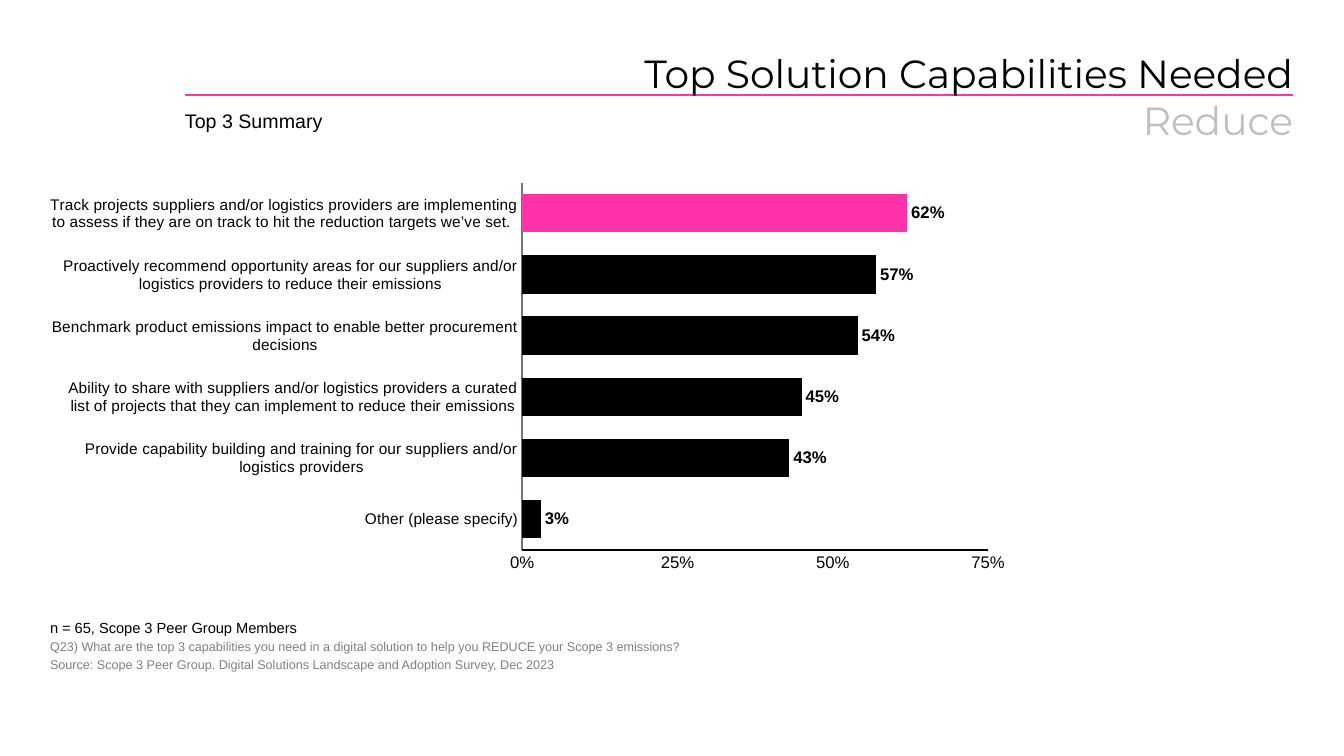
"""Builds the slide on top solution capabilities needed to reduce emissions."""
import pptx
import pptx.chart.data
import pptx.dml.color
import pptx.enum.chart
import pptx.enum.shapes
import pptx.enum.text
import pptx.oxml
import pptx.oxml.ns
import pptx.util

PX = 914400 / 100.8
PINK, BLACK, GREY = "FF32A9", "000000", "808080"


def px(*lengths):
    return [pptx.util.Emu(round(length * PX)) for length in lengths]


def style(font, size, color=BLACK, name="Arial", bold=False):
    font.size = pptx.util.Pt(size)
    font.name = name
    font.bold = bold
    font.color.rgb = pptx.dml.color.RGBColor.from_string(color)


deck = pptx.Presentation()
deck.slide_width, deck.slide_height = px(1344, 756)
page = deck.slides.add_slide(deck.slide_layouts[5])

title = page.shapes.title
title.left, title.top, title.width, title.height = px(185, 49, 1108, 49)
frame = title.text_frame
frame.margin_left = frame.margin_right = frame.margin_top = frame.margin_bottom = 0
frame.vertical_anchor = pptx.enum.text.MSO_ANCHOR.TOP
frame.auto_size = pptx.enum.text.MSO_AUTO_SIZE.NONE
frame.word_wrap = True
para = frame.paragraphs[0]
para.alignment = pptx.enum.text.PP_ALIGN.RIGHT
span = para.add_run()
span.text = "Top Solution Capabilities Needed"
style(span.font, 28, name="Montserrat")
para.add_line_break()
span = para.add_run()
span.text = "Reduce"
style(span.font, 28, "BFBFBF", name="Montserrat")

rule = page.shapes.add_connector(
    pptx.enum.shapes.MSO_CONNECTOR.STRAIGHT, *px(185, 95, 1293, 95))
rule.line.color.rgb = pptx.dml.color.RGBColor.from_string(PINK)
rule.line.width = pptx.util.Pt(2)
rule.element.spPr.append(pptx.oxml.parse_xml(
    f"<a:effectLst {pptx.oxml.ns.nsdecls('a')}/>"))
title.element.addprevious(rule.element)

capabilities = [
    ("Other (please specify)", 0.03),
    ("Provide capability building and training for our suppliers and/or "
     "logistics providers", 0.43),
    ("Ability to share with suppliers and/or logistics providers a curated "
     "list of projects that they can implement to reduce their emissions", 0.45),
    ("Benchmark product emissions impact to enable better procurement decisions", 0.54),
    ("Proactively recommend opportunity areas for our suppliers and/or "
     "logistics providers to reduce their emissions", 0.57),
    ("Track projects suppliers and/or logistics providers are implementing "
     "to assess if they are on track to hit the reduction targets we’ve set. ", 0.62),
]
data = pptx.chart.data.CategoryChartData(number_format="0%")
data.categories = [name for name, share in capabilities]
data.add_series("Series 1", [share for name, share in capabilities])
chart = page.shapes.add_chart(
    pptx.enum.chart.XL_CHART_TYPE.BAR_CLUSTERED, *px(50, 181, 968, 425), data).chart
chart.has_legend = False
chart.has_title = False
style(chart.font, 10)

for axis, size, color in [(chart.category_axis, 11, "6F7878"),
                          (chart.value_axis, 12, BLACK)]:
    axis.major_tick_mark = axis.minor_tick_mark = pptx.enum.chart.XL_TICK_MARK.NONE
    axis.has_major_gridlines = False
    style(axis.tick_labels.font, size)
    axis.format.line.color.rgb = pptx.dml.color.RGBColor.from_string(color)
    axis.format.line.width = pptx.util.Pt(1.57)
chart.value_axis.minimum_scale = 0
chart.value_axis.maximum_scale = 0.75
chart.value_axis.major_unit = 0.25
chart.value_axis.tick_labels.number_format = "0%"
chart.value_axis.tick_labels.number_format_is_linked = False

plot = chart.plots[0]
plot.gap_width = 60
plot.vary_by_categories = False
series = plot.series[0]
for fill, color in [(series.format.fill, BLACK),
                    (series.points[len(capabilities) - 1].format.fill, PINK)]:
    fill.solid()
    fill.fore_color.rgb = pptx.dml.color.RGBColor.from_string(color)
labels = series.data_labels
labels.show_value = True
labels.number_format = "0%"
labels.number_format_is_linked = False
labels.position = pptx.enum.chart.XL_LABEL_POSITION.OUTSIDE_END
style(labels.font, 12, bold=True)

plot_area = chart.element.chart.plotArea
for old_layout in plot_area.findall(pptx.oxml.ns.qn("c:layout")):
    plot_area.remove(old_layout)
settings = [("layoutTarget", "inner"), ("xMode", "edge"), ("yMode", "edge"),
            ("x", 0.486), ("y", 0.004), ("w", 0.483), ("h", 0.864)]
parts = "".join(f'<c:{tag} val="{value}"/>' for tag, value in settings)
plot_area.insert(0, pptx.oxml.parse_xml(
    f"<c:layout {pptx.oxml.ns.nsdecls('c')}>"
    f"<c:manualLayout>{parts}</c:manualLayout></c:layout>"))

subtitle = [("Top 3 Summary", 14, BLACK)]
notes = [
    ("n = 65, Scope 3 Peer Group Members", 10.5, BLACK),
    ("Q23) What are the top 3 capabilities you need in a digital solution "
     "to help you REDUCE your Scope 3 emissions?", 9, GREY),
    ("Source: Scope 3 Peer Group. Digital Solutions Landscape and Adoption "
     "Survey, Dec 2023", 9, GREY),
]
for place, anchor, lines in [
        ((185, 99, 728, 44), pptx.enum.text.MSO_ANCHOR.TOP, subtitle),
        ((50, 607, 889, 75), pptx.enum.text.MSO_ANCHOR.BOTTOM, notes)]:
    frame = page.shapes.add_textbox(*px(*place)).text_frame
    frame.word_wrap = True
    frame.vertical_anchor = anchor
    frame.margin_left = 0
    frame.margin_right, frame.margin_top, frame.margin_bottom = px(10, 10, 10)
    for index, (text, size, color) in enumerate(lines):
        para = frame.add_paragraph() if index else frame.paragraphs[0]
        if index:
            para.space_before = pptx.util.Pt(2)
        span = para.add_run()
        span.text = text
        style(span.font, size, color)

deck.save("out.pptx")
